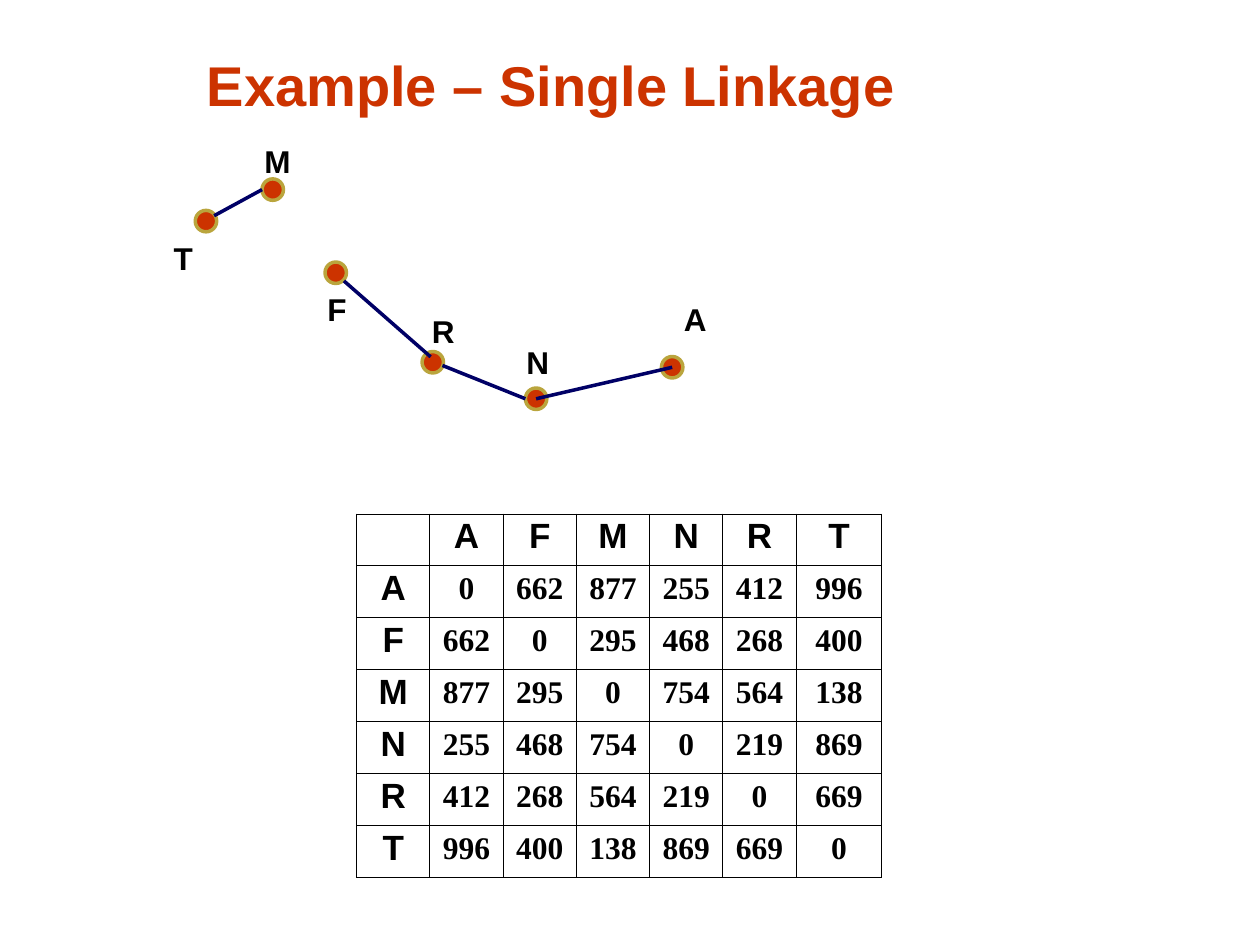
from dataclasses import dataclass

from lxml import etree
from pptx import Presentation
from pptx.dml.color import RGBColor
from pptx.enum import shapes, text
from pptx.oxml.ns import qn
from pptx.util import Inches, Pt

TITLE = "Example – Single Linkage"
CITIES = "AFMNRT"
DISTANCES = [
    [0, 662, 877, 255, 412, 996],
    [662, 0, 295, 468, 268, 400],
    [877, 295, 0, 754, 564, 138],
    [255, 468, 754, 0, 219, 869],
    [412, 268, 564, 219, 0, 669],
    [996, 400, 138, 869, 669, 0],
]

# city: (dot left, top), (label left, top, width), in inches
NODES = {
    "T": ((1.55, 1.67), (1.28, 1.85, 0.36)),
    "M": ((2.08, 1.42), (2.0, 1.08, 0.41)),
    "F": ((2.58, 2.08), (2.5, 2.25, 0.36)),
    "R": ((3.35, 2.79), (3.33, 2.43, 0.38)),
    "N": ((4.17, 3.08), (4.08, 2.67, 0.38)),
    "A": ((5.25, 2.83), (5.33, 2.33, 0.38)),
}
# Each link end: city and the point on its dot, as shares of the diameter
LINKS = [
    (("M", 0, 0.5), ("T", 0.88, 0.25)),
    (("N", 0, 0.5), ("R", 0.95, 0.65)),
    (("A", 0.5, 0.5), ("N", 0.5, 0.5)),
    (("R", 0.4, 0.25), ("F", 0.88, 0.88)),
]
DOT = 0.17
LABEL_HEIGHT = 0.4
TABLE_BOX = (2.83, 4.08, 4.17, 2.88)
LAST_COLUMN, HEADER_ROW = 0.68, 0.4


@dataclass(frozen=True)
class Theme:
    accent: str = "CC3300"
    ring: str = "BAA53D"
    link: str = "000066"
    ink: str = "000000"
    sans: str = "Arial"
    serif: str = "Times New Roman"
    title: int = 32
    heading: int = 20
    body: int = 18
    stroke: float = 2
    border: float = 0.75


THEME = Theme()


def write(frame, words, size, font=THEME.sans, color=THEME.ink, align=None):
    paragraph = frame.paragraphs[0]
    paragraph.alignment = align
    run = paragraph.add_run()
    run.text = str(words)
    run.font.size = Pt(size)
    run.font.name = font
    run.font.bold = True
    run.font.color.rgb = RGBColor.from_string(color)
    return paragraph


def add_title(slide):
    title = slide.shapes.title
    title.left, title.top, title.width, title.height = map(Inches, (0.75, 0.33, 7.25, 0.67))
    title.text_frame.vertical_anchor = text.MSO_ANCHOR.MIDDLE
    write(title.text_frame, TITLE, THEME.title, color=THEME.accent, align=text.PP_ALIGN.CENTER)


def add_borders(cell):
    properties = cell._tc.get_or_add_tcPr()
    for position, side in enumerate(("a:lnL", "a:lnR", "a:lnT", "a:lnB")):
        line = etree.Element(qn(side), w=str(Pt(THEME.border)))
        fill = etree.SubElement(line, qn("a:solidFill"))
        etree.SubElement(fill, qn("a:srgbClr"), val=THEME.ink)
        properties.insert(position, line)


def add_distance_table(slide):
    count = len(CITIES)
    _, _, width, height = TABLE_BOX
    table = slide.shapes.add_table(count + 1, count + 1, *map(Inches, TABLE_BOX)).table
    table.first_row = table.horz_banding = False
    for i in range(count + 1):
        table.columns[i].width = Inches(LAST_COLUMN if i == count else (width - LAST_COLUMN) / count)
        table.rows[i].height = Inches((height - HEADER_ROW) / count if i else HEADER_ROW)

    rows = [["", *CITIES]] + [[city, *line] for city, line in zip(CITIES, DISTANCES)]
    for r, row in enumerate(rows):
        for c, value in enumerate(row):
            cell = table.cell(r, c)
            cell.fill.background()
            cell.vertical_anchor = text.MSO_ANCHOR.MIDDLE
            cell.margin_left = cell.margin_right = Inches(0.05)
            add_borders(cell)
            if value == "":
                continue
            style = (THEME.body, THEME.serif) if r and c else (THEME.heading, THEME.sans)
            paragraph = write(cell.text_frame, value, *style, align=text.PP_ALIGN.CENTER)
            paragraph.line_spacing = 0.8


def add_node(slide, city, dot_at, label_at):
    dot = slide.shapes.add_shape(shapes.MSO_SHAPE.OVAL, *map(Inches, (*dot_at, DOT, DOT)))
    dot.shadow.inherit = False
    dot.fill.solid()
    dot.fill.fore_color.rgb = RGBColor.from_string(THEME.accent)
    dot.line.color.rgb = RGBColor.from_string(THEME.ring)
    dot.line.width = Pt(THEME.stroke)

    label = slide.shapes.add_textbox(*map(Inches, (*label_at, LABEL_HEIGHT)))
    label.text_frame.word_wrap = False
    label.text_frame.auto_size = text.MSO_AUTO_SIZE.SHAPE_TO_FIT_TEXT
    write(label.text_frame, city, THEME.body)


def point_on_dot(city, across, down):
    left, top = NODES[city][0]
    return Inches(left + across * DOT), Inches(top + down * DOT)


def add_link(slide, start, end):
    link = slide.shapes.add_connector(
        shapes.MSO_CONNECTOR.STRAIGHT, *point_on_dot(*start), *point_on_dot(*end))
    link.line.color.rgb = RGBColor.from_string(THEME.link)
    link.line.width = Pt(THEME.stroke)
    etree.SubElement(link._element.spPr, qn("a:effectLst"))


def main():
    deck = Presentation()
    deck.slide_width, deck.slide_height = Inches(10), Inches(7.5)
    slide = deck.slides.add_slide(deck.slide_layouts.get_by_name("Title Only"))
    add_title(slide)
    add_distance_table(slide)
    for city, (dot_at, label_at) in NODES.items():
        add_node(slide, city, dot_at, label_at)
    for start, end in LINKS:
        add_link(slide, start, end)
    deck.save("out.pptx")


if __name__ == "__main__":
    main()
